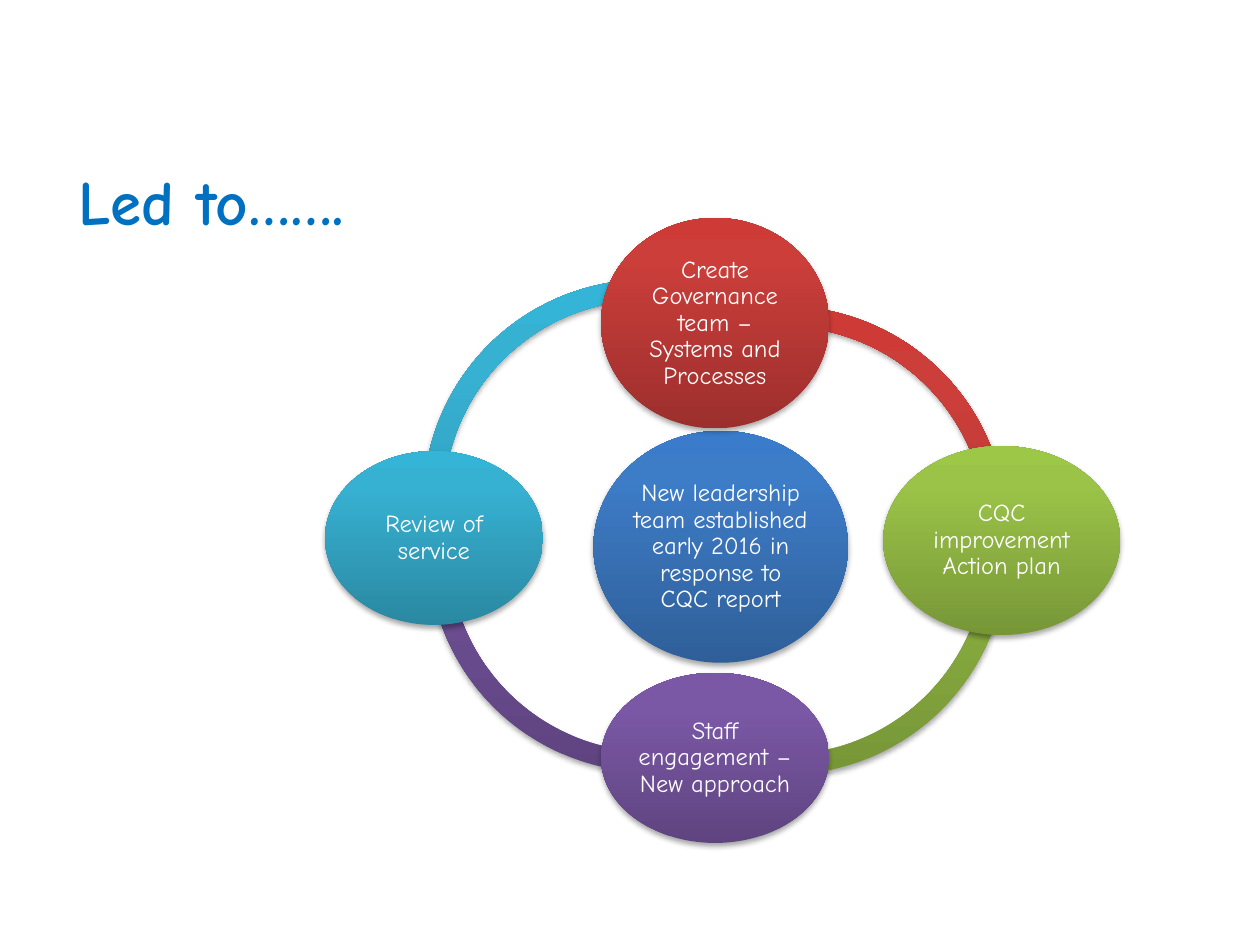
"""Build a slide showing a ring of four actions around a new leadership team."""
from dataclasses import dataclass

from pptx import Presentation
from pptx.dml.color import RGBColor
from pptx.enum import shapes, text
from pptx.oxml import parse_xml
from pptx.oxml.ns import nsdecls
from pptx.util import Inches, Pt


@dataclass(frozen=True)
class Theme:
    font = "Comic Neue"
    title_size = Pt(36)
    label_size = Pt(14)
    title = RGBColor.from_string("0070C0")
    label = RGBColor.from_string("FFFFFF")
    shadow = "000000"
    blue = ("2F5F99", "3D7CC7", "3A7CCB")
    red = ("9C2F2D", "CB3E3A", "CE3B37")
    green = ("779737", "9BC348", "9DC746")
    purple = ("5F4480", "7B58A6", "7C57A8")
    teal = ("2A88A2", "37B1D2", "34B4D6")


theme = Theme()


def add_glossy_shape(slide, kind, box, gradient):
    shape = slide.shapes.add_shape(kind, *map(Inches, box))
    shape.line.fill.background()
    stops = "".join(
        f'<a:gs pos="{position}"><a:srgbClr val="{color}"/></a:gs>'
        for position, color in zip((0, 80000, 100000), gradient)
    )
    properties = shape._element.spPr
    properties.prstGeom.addnext(parse_xml(
        f'<a:gradFill {nsdecls("a")} rotWithShape="1"><a:gsLst>{stops}</a:gsLst>'
        '<a:lin ang="16200000" scaled="0"/></a:gradFill>'
    ))
    properties.append(parse_xml(
        f'<a:effectLst {nsdecls("a")}>'
        '<a:outerShdw blurRad="40000" dist="23000" dir="5400000" rotWithShape="0">'
        f'<a:srgbClr val="{theme.shadow}"><a:alpha val="35000"/></a:srgbClr>'
        '</a:outerShdw></a:effectLst>'
    ))
    return shape


presentation = Presentation()
presentation.slide_width = Inches(10)
presentation.slide_height = Inches(7.5)
slide = presentation.slides.add_slide(presentation.slide_layouts[5])

title = slide.shapes.title
title.left, title.top, title.width, title.height = map(Inches, (0.52, 1.24, 8.81, 0.67))
title.text_frame.text = "Led to……."
title.text_frame.auto_size = text.MSO_AUTO_SIZE.NONE
title.text_frame.vertical_anchor = text.MSO_ANCHOR.TOP
paragraph = title.text_frame.paragraphs[0]
paragraph.alignment = text.PP_ALIGN.LEFT
paragraph.font.name = theme.font
paragraph.font.size = theme.title_size
paragraph.font.bold = True
paragraph.font.color.rgb = theme.title

arc_size = 3.54
arc_thickness = 0.046
arcs = [
    (3.36, 2.22, 178.13, 286.76, theme.teal),
    (3.4, 2.59, 73.19, 183.02, theme.purple),
    (4.45, 2.61, 357.3, 108.58, theme.green),
    (4.45, 2.43, 251.39, 3.28, theme.red),
]
for left, top, start, end, gradient in arcs:
    arc = add_glossy_shape(
        slide, shapes.MSO_SHAPE.BLOCK_ARC, (left, top, arc_size, arc_size), gradient
    )
    arc.adjustments[0] = start * 0.6
    arc.adjustments[1] = end * 0.6
    arc.adjustments[2] = arc_thickness

circles = [
    ("New leadership team established early 2016 in response to CQC report",
     (4.71, 3.42, 2.02, 1.84), theme.blue),
    ("Create Governance team – Systems and Processes", (4.77, 1.73, 1.81, 1.67), theme.red),
    ("CQC improvement Action plan", (7.01, 3.54, 1.88, 1.5), theme.green),
    ("Staff engagement – New approach", (4.77, 5.34, 1.81, 1.35), theme.purple),
    ("Review of service", (2.58, 3.58, 1.73, 1.38), theme.teal),
]
for label, box, gradient in circles:
    circle = add_glossy_shape(slide, shapes.MSO_SHAPE.OVAL, box, gradient)
    frame = circle.text_frame
    frame.word_wrap = True
    frame.vertical_anchor = text.MSO_ANCHOR.MIDDLE
    frame.margin_left = frame.margin_right = Inches(0.02)
    frame.margin_top = frame.margin_bottom = Inches(0.02)
    frame.text = label
    paragraph = frame.paragraphs[0]
    paragraph.alignment = text.PP_ALIGN.CENTER
    paragraph.line_spacing = 0.9
    paragraph.font.name = theme.font
    paragraph.font.size = theme.label_size
    paragraph.font.color.rgb = theme.label

presentation.save("out.pptx")
